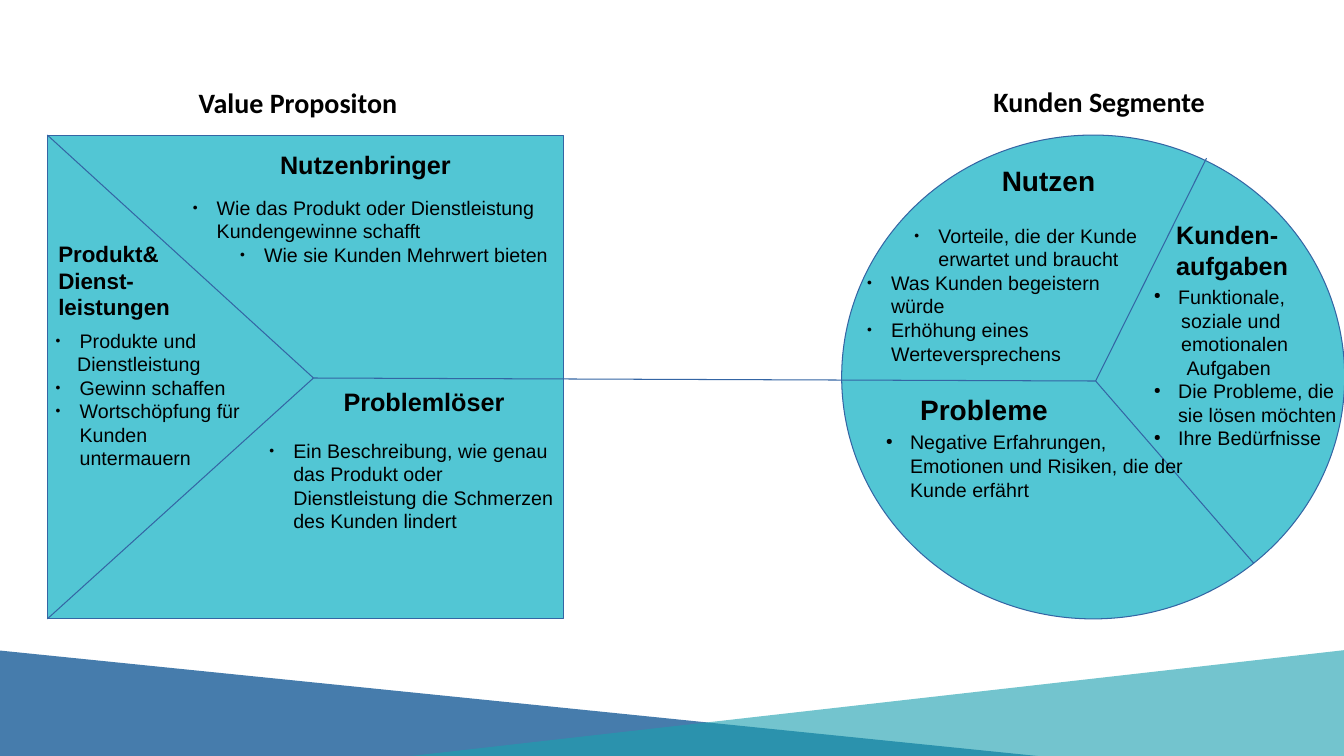
"""Build the value proposition canvas with its offer square and customer circle."""
from dataclasses import dataclass

from lxml import etree
from pptx import Presentation
from pptx.dml.color import RGBColor
from pptx.enum.shapes import MSO_CONNECTOR, MSO_SHAPE
from pptx.enum.text import MSO_ANCHOR, MSO_AUTO_SIZE, PP_ALIGN
from pptx.oxml.ns import qn
from pptx.util import Pt

LEFT, CENTER = PP_ALIGN.LEFT, PP_ALIGN.CENTER
TOP = MSO_ANCHOR.TOP
GROW = MSO_AUTO_SIZE.SHAPE_TO_FIT_TEXT
STRAIGHT = MSO_CONNECTOR.STRAIGHT
TRIANGLE, SQUARE = MSO_SHAPE.ISOSCELES_TRIANGLE, MSO_SHAPE.RECTANGLE
CIRCLE = MSO_SHAPE.FLOWCHART_CONNECTOR


@dataclass(frozen=True)
class Theme:
    """Colours, fonts and sizes of the slide."""
    text: str = "000000"
    panel: str = "52C6D4"
    outline: str = "3465A4"
    wave_left: str = "095191"
    wave_right: str = "1BA0AF"
    title_font: str = "Calibri"
    font: str = "Arial"
    title_size: int = 20
    large_size: int = 20
    medium_size: int = 18
    small_size: int = 16
    list_size: int = 14
    line_width: float = 0.75


@dataclass(frozen=True)
class Item:
    """One list paragraph with its left margin in points."""
    text: str
    margin: float = 17.28
    marked: bool = True


THEME = Theme()
HANG = 17.28
NESTED = 51.12

CORNER_TOP, CORNER_BOTTOM = (33.84, 96.48), (33.84, 442.08)
OFFER_HUB, CUSTOMER_HUB = (223.92, 270), (782.64, 272.16)
LINES = [
    (CORNER_BOTTOM, OFFER_HUB),
    (CORNER_TOP, OFFER_HUB),
    (OFFER_HUB, CUSTOMER_HUB),
    (CUSTOMER_HUB, (861.84, 113.04)),
    (CUSTOMER_HUB, (895.68, 402.48)),
]

TITLES = [
    ((96.48, 57.6, 232.56, 27.36), "Value Propositon"),
    ((680.4, 56.88, 209.52, 31.68), "Kunden Segmente"),
]

HEADINGS = [
    ((192.96, 102.96, 150.48, 28.8), THEME.medium_size, ["Nutzenbringer"]),
    ((238.32, 272.16, 153.36, 28.8), THEME.medium_size, ["Problemlöser"]),
    ((34.56, 167.76, 103.68, 65.52), THEME.small_size,
     ["Produkt&", "Dienst-", "leistungen"]),
    ((708.48, 113.04, 113.04, 31.68), THEME.large_size, ["Nutzen"]),
    ((833.04, 153.36, 102.24, 51.12), THEME.medium_size,
     ["Kunden-", "aufgaben"]),
    ((650.16, 276.48, 132.48, 31.68), THEME.large_size, ["Probleme"]),
]

LISTS = [
    ((130.32, 136.08, 277.92, 79.92), [
        Item("Wie das Produkt oder Dienstleistung Kundengewinne schafft"),
        Item("Wie sie Kunden Mehrwert bieten", NESTED)]),
    ((185.04, 309.6, 221.04, 74.88), [
        Item("Ein Beschreibung, wie genau das Produkt oder Dienstleistung "
             "die Schmerzen des Kunden lindert")]),
    ((32.4, 231.12, 147.6, 108.72), [
        Item("Produkte und"),
        Item("Dienstleistung", 15.56, False),
        Item("Gewinn schaffen"),
        Item("Wortschöpfung für Kunden untermauern")]),
    ((612, 156.24, 210.24, 108.72), [
        Item("Vorteile, die der Kunde erwartet und braucht", NESTED),
        Item("Was Kunden begeistern würde"),
        Item("Erhöhung eines Werteversprechens")]),
    ((625.68, 303.84, 226.8, 58.32), [
        Item("Negative Erfahrungen, Emotionen und Risiken, die der Kunde "
             "erfährt")]),
    ((817.2, 200.16, 144.72, 126), [
        Item("Funktionale,"),
        Item("soziale und", 19.45, False),
        Item("emotionalen", 19.45, False),
        Item("Aufgaben", 23.34, False),
        Item("Die Probleme, die sie lösen möchten"),
        Item("Ihre Bedürfnisse")]),
]


def assign(target, values):
    """Set each named attribute of the target."""
    for name, value in values.items():
        setattr(target, name, value)


def add_panel(page, kind, frame, color, alpha=None):
    """Add a filled shape, outlined when opaque."""
    panel = page.shapes.add_shape(kind, *map(Pt, frame))
    panel.shadow.inherit = False
    panel.fill.solid()
    panel.fill.fore_color.rgb = RGBColor.from_string(color)
    if alpha is None:
        panel.line.color.rgb = RGBColor.from_string(THEME.outline)
        panel.line.width = Pt(THEME.line_width)
    else:
        panel.line.fill.background()
        tint = panel.element.spPr.find(f".//{qn('a:srgbClr')}")
        etree.SubElement(tint, qn("a:alpha"), val=str(alpha * 1000))
    return panel


def add_line(page, start, end):
    """Add a thin straight divider between two points."""
    line = page.shapes.add_connector(STRAIGHT, *map(Pt, start + end))
    line.line.color.rgb = RGBColor.from_string(THEME.outline)
    line.line.width = Pt(THEME.line_width)
    etree.SubElement(line.element.spPr, qn("a:effectLst"))


def set_bullet(para, item):
    """Give the paragraph its indents and a small dot or no mark."""
    props = para._p.get_or_add_pPr()
    hang = HANG if item.marked else 0
    props.set("marL", str(int(Pt(item.margin))))
    props.set("indent", str(-int(Pt(hang))))
    if not item.marked:
        etree.SubElement(props, qn("a:buNone"))
        return
    tint = etree.SubElement(props, qn("a:buClr"))
    etree.SubElement(tint, qn("a:srgbClr"), val=THEME.text)
    etree.SubElement(props, qn("a:buSzPct"), val="45000")
    etree.SubElement(props, qn("a:buChar"), char="●")
    para.level = 1 if item.margin == NESTED else 0


def fill_text(box, frame, items, size, font=THEME.font, bold=False, align=LEFT):
    """Place the box in front and write its formatted paragraphs."""
    box.element.getparent().append(box.element)
    assign(box, dict(zip(("left", "top", "width", "height"), map(Pt, frame))))
    text = box.text_frame
    assign(text, {"word_wrap": True, "auto_size": GROW, "vertical_anchor": TOP,
                  "margin_left": Pt(7.2), "margin_right": Pt(7.2),
                  "margin_top": Pt(3.6), "margin_bottom": Pt(3.6)})
    for index, item in enumerate(items):
        para = text.add_paragraph() if index else text.paragraphs[0]
        set_bullet(para, item)
        assign(para, {"alignment": align, "space_before": Pt(0)})
        span = para.add_run()
        span.text = item.text
        assign(span.font, {"name": font, "size": Pt(size), "bold": bold})
        span.font.color.rgb = RGBColor.from_string(THEME.text)


def new_text(page):
    """Add an empty text box to be placed later."""
    return page.shapes.add_textbox(Pt(0), Pt(0), Pt(0), Pt(0))


def main():
    """Build and save the slide."""
    deck = Presentation()
    assign(deck, {"slide_width": Pt(960), "slide_height": Pt(540)})
    page = deck.slides.add_slide(deck.slide_layouts[4])
    title, *bodies = page.placeholders

    waves = [
        ((-552.96, 464.4, 1421.28, 88.56), THEME.wave_left, 75, 0.387),
        ((141.12, 464.4, 1638, 92.88), THEME.wave_right, 61, 0.5),
    ]
    for frame, color, alpha, peak in waves:
        wave = add_panel(page, TRIANGLE, frame, color, alpha)
        wave.adjustments[0] = peak
    add_panel(page, SQUARE, (*CORNER_TOP, 368.64, 345.6), THEME.panel)
    add_panel(page, CIRCLE, (601.2, 96.48, 359.28, 345.6), THEME.panel)
    for start, end in LINES:
        add_line(page, start, end)

    for box, (frame, words) in zip((title, new_text(page)), TITLES):
        fill_text(box, frame, [Item(words, 0, False)], THEME.title_size,
                  THEME.title_font, True, CENTER)
    for frame, size, words in HEADINGS:
        items = [Item(word, 0, False) for word in words]
        fill_text(new_text(page), frame, items, size, bold=True)
    for frame, items in LISTS:
        box = bodies.pop(0) if bodies else new_text(page)
        fill_text(box, frame, items, THEME.list_size)
    deck.save("out.pptx")


if __name__ == "__main__":
    main()
